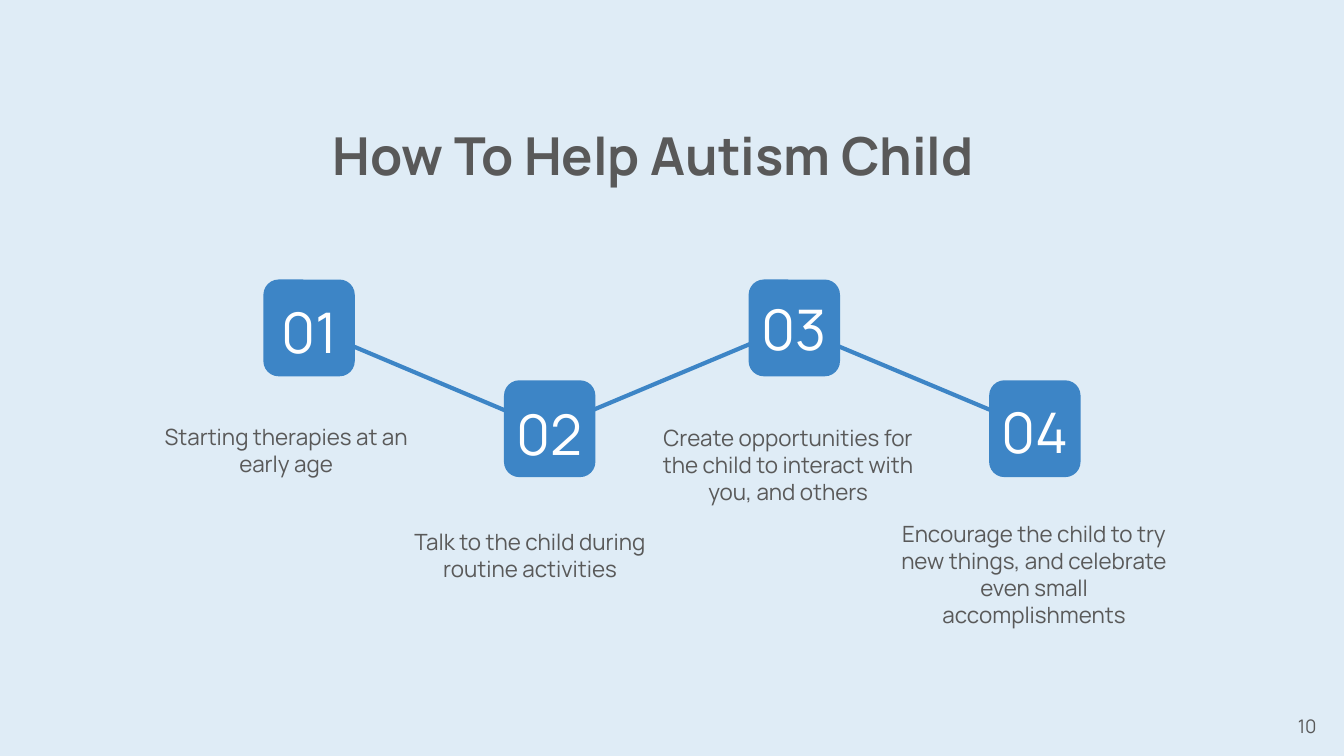
from lxml import etree
from pptx import Presentation
from pptx.dml.color import RGBColor
from pptx.enum.shapes import MSO_CONNECTOR, MSO_SHAPE
from pptx.enum.text import MSO_ANCHOR, MSO_AUTO_SIZE, PP_ALIGN
from pptx.oxml.ns import qn
from pptx.util import Inches, Pt

STRAIGHT = MSO_CONNECTOR.STRAIGHT
ROUNDED = MSO_SHAPE.ROUNDED_RECTANGLE
TOP, MIDDLE = MSO_ANCHOR.TOP, MSO_ANCHOR.MIDDLE
CENTER = PP_ALIGN.CENTER
NO_AUTOFIT = MSO_AUTO_SIZE.NONE
TITLE_ONLY = 5

FONT = "Manrope"
COLORS = {
    "background": "DFECF6",
    "accent": "3D85C6",
    "text": "595959",
    "number": "FFFFFF",
}

TILE_SIZE = (0.68, 0.72)
NUMBER_SIZE = (0.86, 0.63)

# Tile position, top of the number box, caption box and caption
STEPS = [
    ((1.96, 2.08), 2.15, (1.12, 3.05, 2.02, 0.55),
     "Starting therapies at an early age"),
    ((3.75, 2.83), 2.91, (2.81, 3.83, 2.27, 0.69),
     "Talk to the child during routine activities"),
    ((5.57, 2.08), 2.13, (4.73, 3.06, 2.27, 0.66),
     "Create opportunities for the child to interact with you, and others"),
    ((7.36, 2.83), 2.89, (6.56, 3.77, 2.27, 1.04),
     "Encourage the child to try new things, and celebrate even small "
     "accomplishments"),
]
PATH_POINTS = [(2.28, 2.43), (4.08, 3.19), (5.89, 2.43), (7.7, 3.19)]


def rgb(name):
    return RGBColor.from_string(COLORS[name])


def set_text(shape, text, size, color="text", bold=False, anchor=TOP):
    frame = shape.text_frame
    frame.word_wrap = True
    frame.auto_size = NO_AUTOFIT
    frame.vertical_anchor = anchor
    frame.margin_left = frame.margin_right = Inches(0.1)
    frame.margin_top = frame.margin_bottom = Inches(0.1)
    paragraph = frame.paragraphs[0]
    paragraph.alignment = CENTER
    run = paragraph.add_run()
    run.text = text
    run.font.name = FONT
    run.font.size = Pt(size)
    run.font.bold = bold
    run.font.color.rgb = rgb(color)
    return paragraph


def add_text(slide, box, text, size, **text_format):
    shape = slide.shapes.add_textbox(*map(Inches, box))
    return set_text(shape, text, size, **text_format)


def add_title(slide, box, text):
    title = slide.shapes.title
    title.left, title.top, title.width, title.height = map(Inches, box)
    set_text(title, text, 28, bold=True)


def add_path(slide, points):
    """Join the points with a zigzag of straight lines."""
    for start, end in zip(points, points[1:]):
        line = slide.shapes.add_connector(
            STRAIGHT, *map(Inches, (*start, *end)))
        line.line.color.rgb = rgb("accent")
        line.line.width = Pt(2.25)
        etree.SubElement(line._element.spPr, qn("a:effectLst"))


def add_step(slide, number, tile_position, number_top, caption_box, caption):
    left, top = tile_position
    tile = slide.shapes.add_shape(
        ROUNDED, *map(Inches, (left, top, *TILE_SIZE)))
    tile.shadow.inherit = False
    tile.fill.solid()
    tile.fill.fore_color.rgb = rgb("accent")
    tile.line.fill.background()

    number_left = left + (TILE_SIZE[0] - NUMBER_SIZE[0]) / 2
    add_text(slide, (number_left, number_top, *NUMBER_SIZE), f"{number:02d}",
             30, color="number", anchor=MIDDLE)
    add_text(slide, caption_box, caption, 12)


def add_page_number(slide, box, number):
    paragraph = add_text(slide, box, str(number), 10)
    properties = paragraph._p.get_or_add_pPr()
    properties.set("marL", str(Inches(0.5)))
    properties.set("indent", str(Inches(-0.34)))


def main():
    presentation = Presentation()
    presentation.slide_width = Inches(10)
    presentation.slide_height = Inches(10) * 9 // 16
    slide = presentation.slides.add_slide(
        presentation.slide_layouts[TITLE_ONLY])
    slide.background.fill.solid()
    slide.background.fill.fore_color.rgb = rgb("background")

    add_title(slide, (0.66, 0.82, 8.48, 0.63), "How To Help Autism Child ")
    add_path(slide, PATH_POINTS)
    for number, step in enumerate(STEPS, start=1):
        add_step(slide, number, *step)
    add_page_number(slide, (9.3, 5.22, 0.69, 0.28), 10)
    presentation.save("out.pptx")


if __name__ == "__main__":
    main()
